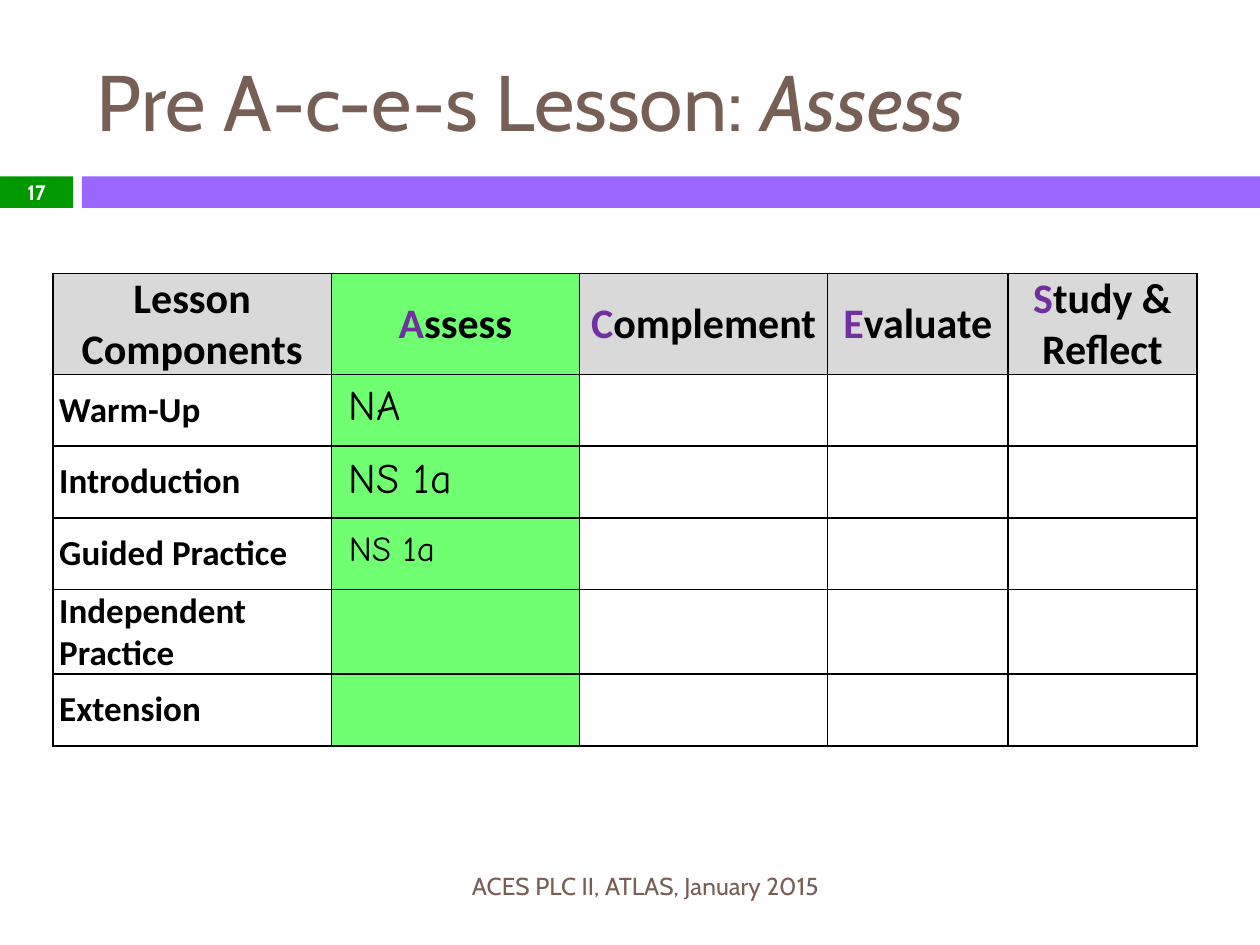
from dataclasses import dataclass

from lxml.etree import SubElement
from pptx import Presentation
from pptx.dml.color import RGBColor
from pptx.enum.shapes import MSO_SHAPE as Shape
from pptx.enum.text import MSO_ANCHOR as Anchor, PP_ALIGN as Align
from pptx.oxml.ns import qn
from pptx.util import Emu, Pt

EMU_PER_PX = 9144  # 100 px to the inch

COLORS = {
    "brown": "775F55",
    "green": "009900",
    "violet": "9966FF",
    "initial": "7030A0",
    "header": "D9D9D9",
    "highlight": "70FF70",
    "black": "000000",
    "white": "FFFFFF",
}


@dataclass
class Run:
    text: str
    size: float
    font: str
    color: str
    bold: bool = False
    italic: bool = False


@dataclass
class Bar:
    left: int
    width: int
    color: str


@dataclass
class Label:
    box: tuple[int, int, int, int]
    runs: list[Run]
    align: Align = Align.LEFT
    anchor: Anchor = Anchor.MIDDLE
    line_spacing: float = 1.0


def px(length: int) -> Emu:
    return Emu(length * EMU_PER_PX)


def rgb(name: str) -> RGBColor:
    return RGBColor.from_string(COLORS[name])


def add_runs(paragraph, runs: list[Run]) -> None:
    for item in runs:
        run = paragraph.add_run()
        run.text = item.text
        font = run.font
        font.size, font.name = Pt(item.size), item.font
        font.bold, font.italic = item.bold, item.italic
        font.color.rgb = rgb(item.color)


def add_bar(slide, bar: Bar) -> None:
    shape = slide.shapes.add_shape(
        Shape.RECTANGLE, px(bar.left), px(140), px(bar.width), px(25))
    shape.shadow.inherit = False
    shape.fill.solid()
    shape.fill.fore_color.rgb = rgb(bar.color)
    shape.line.fill.background()


def add_label(slide, label: Label) -> None:
    frame = slide.shapes.add_textbox(*map(px, label.box)).text_frame
    frame.word_wrap = True
    frame.vertical_anchor = label.anchor
    paragraph = frame.paragraphs[0]
    paragraph.alignment = label.align
    paragraph.line_spacing = label.line_spacing
    add_runs(paragraph, label.runs)


def style_cell(cell, fill: str) -> None:
    properties = cell._tc.get_or_add_tcPr()
    for side in ("a:lnL", "a:lnR", "a:lnT", "a:lnB"):
        line = SubElement(properties, qn(side), w=str(Pt(1)))
        solid = SubElement(line, qn("a:solidFill"))
        SubElement(solid, qn("a:srgbClr"), val=COLORS["black"])
    cell.fill.solid()
    cell.fill.fore_color.rgb = rgb(fill)
    cell.margin_left = cell.margin_right = px(5)
    cell.margin_top = cell.margin_bottom = 0
    cell.vertical_anchor = Anchor.MIDDLE


def cell_run(text: str, size: int, color: str = "black") -> Run:
    return Run(text, size, "Calibri", color, bold=True)


def add_lesson_table(slide) -> None:
    widths = [221, 197, 197, 143, 150]
    heights = [80, 57, 57, 57, 67, 57]
    stages = ["Assess", "Complement", "Evaluate", "Study & Reflect"]
    components = ["Warm-Up", "Introduction", "Guided Practice",
                  "Independent Practice", "Extension"]
    table = slide.shapes.add_table(
        len(heights), len(widths), px(42), px(217),
        px(sum(widths)), px(sum(heights))).table
    for column, width in zip(table.columns, widths):
        column.width = px(width)
    for row, height in zip(table.rows, heights):
        row.height = px(height)

    # Fills and borders: the Assess column stands out
    for r in range(len(heights)):
        for c in range(len(widths)):
            fill = "highlight" if c == 1 else "header" if r == 0 else "white"
            style_cell(table.cell(r, c), fill)

    # Header row, with the initials that spell ACES in purple
    headers = [[cell_run("Lesson Components", 24)]]
    headers += [[cell_run(stage[0], 24, "initial"), cell_run(stage[1:], 24)]
                for stage in stages]
    for c, runs in enumerate(headers):
        paragraph = table.cell(0, c).text_frame.paragraphs[0]
        paragraph.alignment = Align.CENTER
        add_runs(paragraph, runs)

    # First column
    for r, component in enumerate(components, start=1):
        paragraph = table.cell(r, 0).text_frame.paragraphs[0]
        add_runs(paragraph, [cell_run(component, 20)])


def answer(text: str, top: int, height: int, size: int) -> Label:
    return Label((267, top, 175, height), [Run(text, size, "Comic Neue", "black")],
                 anchor=Anchor.TOP, line_spacing=0.9)


def main() -> None:
    presentation = Presentation()
    presentation.slide_width, presentation.slide_height = px(1000), px(750)
    slide = presentation.slides.add_slide(presentation.slide_layouts[6])

    # Band under the title
    for bar in (Bar(0, 58, "green"), Bar(65, 935, "violet")):
        add_bar(slide, bar)

    # Title
    add_label(slide, Label((67, 25, 892, 108), [
        Run("Pre A-c-e-s Lesson: ", 45, "Cabin", "brown"),
        Run("Assess", 45, "Cabin", "brown", italic=True)]))

    add_lesson_table(slide)

    # Answers over the Assess column, slide number and footer
    labels = [
        answer("NA", 300, 47, 24),
        answer("NS 1a", 358, 47, 24),
        answer("NS 1a", 417, 74, 20),
        Label((0, 139, 58, 27), [Run("17", 11.9, "Cabin", "white", bold=True)],
              Align.CENTER),
        Label((67, 683, 593, 40),
              [Run("ACES PLC II, ATLAS, January 2015", 14, "Cabin", "brown")],
              Align.RIGHT),
    ]
    for label in labels:
        add_label(slide, label)

    presentation.save("out.pptx")


if __name__ == "__main__":
    main()
